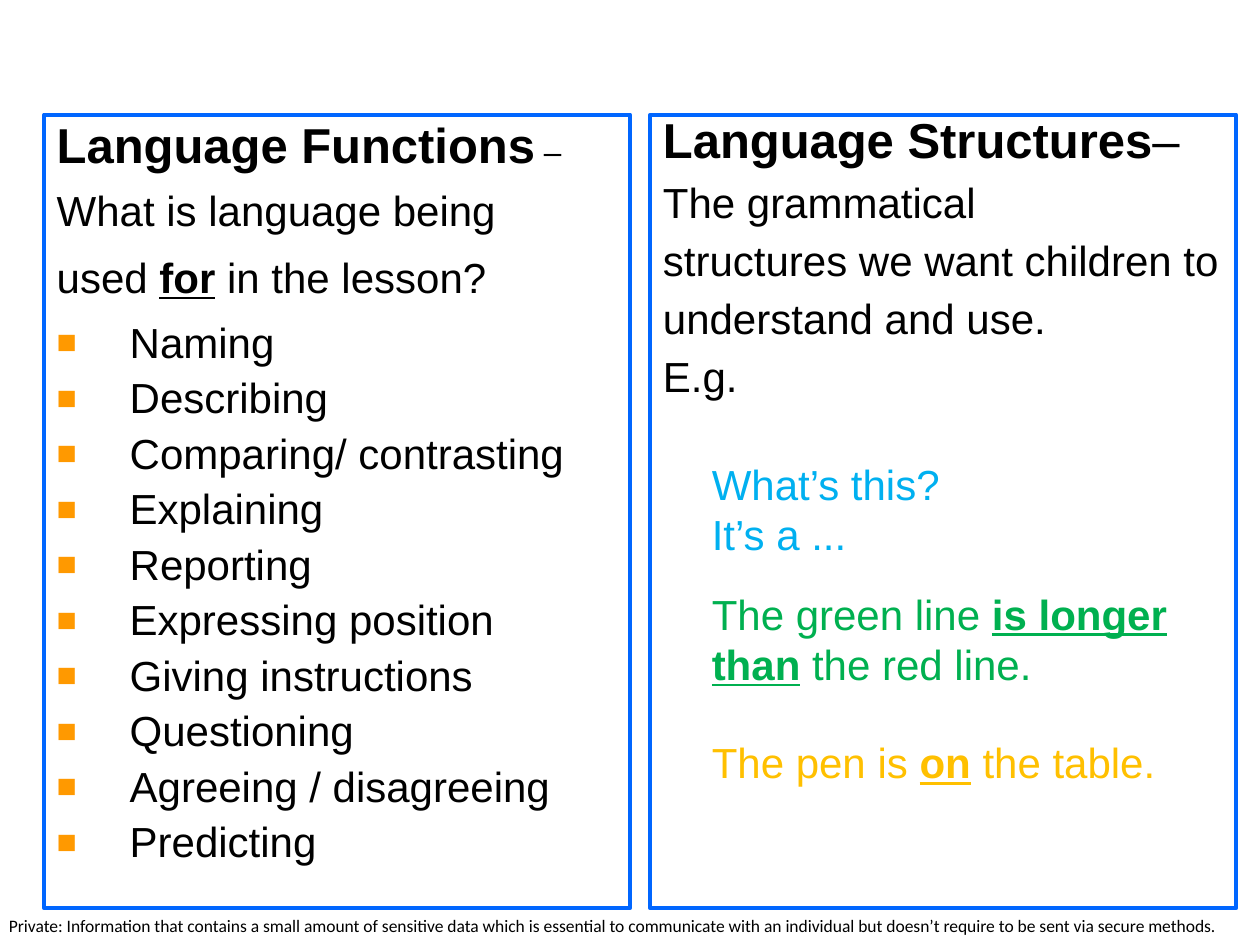
from lxml import etree
from pptx import Presentation
from pptx.dml.color import RGBColor
from pptx.enum.text import MSO_AUTO_SIZE
from pptx.oxml.ns import qn
from pptx.util import Cm, Pt

NO_FIT = MSO_AUTO_SIZE.NONE
GROW = MSO_AUTO_SIZE.SHAPE_TO_FIT_TEXT
BLACK, BLUE, ORANGE = "000000", "0066FF", "FF9900"
PANEL_TOP, PANEL_W, PANEL_H = 2.31, 11.81, 16
HANGING = Cm(1.47)


def rgb(value):
    return RGBColor.from_string(value)


def add_runs(p, runs, color=BLACK, font="Arial"):
    """Add (text, size, emphasis) runs; emphasis holds b for bold, u for underline."""
    for text, size, emphasis in runs:
        r = p.add_run()
        r.text = text
        r.font.name = font
        r.font.size = Pt(size)
        r.font.color.rgb = rgb(color)
        r.font.bold = "b" in emphasis
        r.font.underline = "u" in emphasis


prs = Presentation()
prs.slide_width, prs.slide_height = Cm(25.4), Cm(19.05)
s = prs.slides.add_slide(prs.slide_layouts[3])
title = s.shapes.title
title.element.getparent().remove(title.element)

# Panel paragraphs: bulleted, line spacing, space before, runs
functions = [
    (False, 0.9, 0, [("Language Functions", 28, "b"), (" –", 18, "")]),
    (False, 0.7, 14, [("What is language being", 24, "")]),
    (False, 0.7, 18, [("used ", 24, ""), ("for", 24, "bu"), (" in the lesson?", 24, "")]),
]
skills = ["Naming", "Describing", "Comparing/ contrasting", "Explaining", "Reporting",
          "Expressing position", "Giving instructions", "Questioning",
          "Agreeing / disagreeing", "Predicting"]
for i, skill in enumerate(skills):
    functions.append((True, 0.9, 5.8 if i else 12.3, [(skill, 24, "")]))

structures = [(False, 0.8, 0, [("Language Structures", 28, "b"), ("–", 28, "")])]
for line in ["The grammatical", "structures we want children to", "understand and use.", "E.g."]:
    structures.append((False, 0.7, 12.9, [(line, 24, "")]))

for idx, left, lines in [(1, 0.89, functions), (2, 13.11, structures)]:
    sp = s.placeholders[idx]
    sp.left, sp.top, sp.width, sp.height = Cm(left), Cm(PANEL_TOP), Cm(PANEL_W), Cm(PANEL_H)
    sp.line.color.rgb = rgb(BLUE)
    sp.line.width = Pt(2.25)
    tf = sp.text_frame
    tf.auto_size = NO_FIT
    for i, (bulleted, spacing, before, runs) in enumerate(lines):
        p = tf.add_paragraph() if i else tf.paragraphs[0]
        pPr = p._p.get_or_add_pPr()
        pPr.set("marL", str(HANGING))
        pPr.set("indent", str(-HANGING))
        if bulleted:
            color = etree.SubElement(pPr, qn("a:buClr"))
            etree.SubElement(color, qn("a:srgbClr"), val=ORANGE)
            etree.SubElement(pPr, qn("a:buSzPct"), val="80000")
            etree.SubElement(pPr, qn("a:buFont"), typeface="Arial")
            etree.SubElement(pPr, qn("a:buChar"), char="■")
        else:
            etree.SubElement(pPr, qn("a:buNone"))
        p.line_spacing = spacing
        p.space_before = Pt(before)
        add_runs(p, runs)

# Example sentences: top, width, height, colour, paragraphs of runs
examples = [
    (9.12, 8.53, 2.29, "00B0F0", [[("What’s this?", 24, "")], [("It’s a ...", 24, "")]]),
    (11.73, 11.3, 2.29, "00B050", [[("The green line ", 24, ""), ("is longer than", 24, "bu"),
                                    (" the red line.", 24, "")]]),
    (14.73, 10.11, 1.27, "FFC000", [[("The pen is ", 24, ""), ("on", 24, "bu"),
                                     (" the table.", 24, "")]]),
]
for top, width, height, color, paragraphs in examples:
    tf = s.shapes.add_textbox(Cm(14.1), Cm(top), Cm(width), Cm(height)).text_frame
    tf.word_wrap = True
    tf.auto_size = GROW
    for i, runs in enumerate(paragraphs):
        p = tf.add_paragraph() if i else tf.paragraphs[0]
        add_runs(p, runs, color)

# Privacy footer
tf = s.shapes.add_textbox(Cm(0.18), Cm(18.44), Cm(24.54), Cm(0.43)).text_frame
tf.margin_left = tf.margin_right = tf.margin_top = tf.margin_bottom = 0
tf.word_wrap = True
tf.auto_size = GROW
notice = ("Private: Information that contains a small amount of sensitive data which is essential "
          "to communicate with an individual but doesn’t require to be sent via secure methods.")
add_runs(tf.paragraphs[0], [(notice, 10, "")], font="Calibri")

prs.save("out.pptx")
